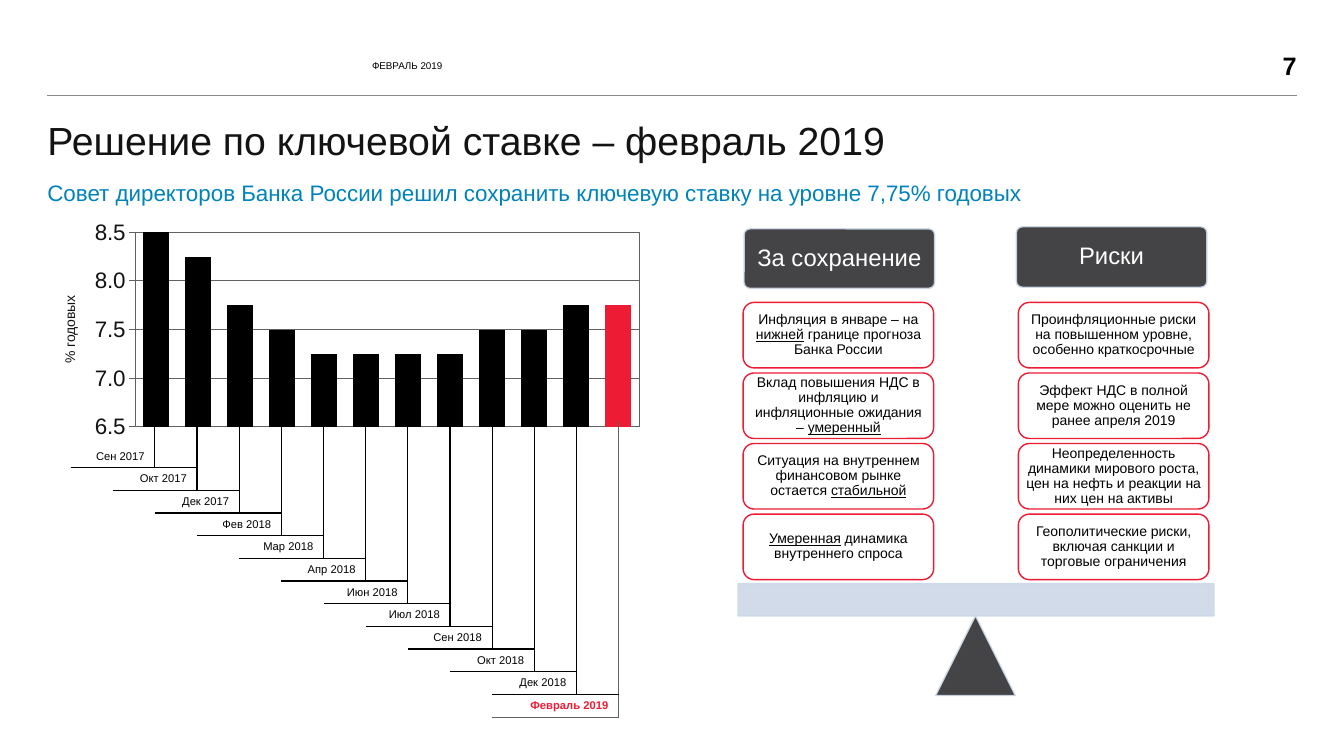
import lxml.etree
import pptx
import pptx.chart.data
import pptx.dml.color
import pptx.enum.chart
import pptx.enum.shapes
import pptx.enum.text
import pptx.oxml
import pptx.oxml.ns
import pptx.util

Inches = pptx.util.Inches
Pt = pptx.util.Pt
Align = pptx.enum.text.PP_ALIGN
Anchor = pptx.enum.text.MSO_ANCHOR
Preset = pptx.enum.shapes.MSO_SHAPE
qn = pptx.oxml.ns.qn

COLORS = {"ink": "131314", "black": "000000", "white": "FFFFFF", "red": "ED1B34",
          "blue": "0082BB", "rule": "888A8D", "grid": "616164",
          "dark": "303032", "pale": "CCD8E7"}

TITLE = "Решение по ключевой ставке – февраль 2019"
SUBTITLE = "Совет директоров Банка России решил сохранить ключевую ставку на уровне 7,75% годовых"
DATE = "ФЕВРАЛЬ 2019"
PAGE = "7"
AXIS_TITLE = "% годовых"
RATES = [("Сен 2017", 8.5), ("Окт 2017", 8.25), ("Дек 2017", 7.75), ("Фев 2018", 7.5),
         ("Мар 2018", 7.25), ("Апр 2018", 7.25), ("Июн 2018", 7.25), ("Июл 2018", 7.25),
         ("Сен 2018", 7.5), ("Окт 2018", 7.5), ("Дек 2018", 7.75), ("Февраль 2019", 7.75)]
SCALES = [
    {"header": "За сохранение", "header_at": (7.38, 2.27, 1.89, 0.59), "left": 7.37, "reasons": [
        [("Инфляция в январе – на ", False), ("нижней", True),
         (" границе прогноза Банка России", False)],
        [("Вклад повышения НДС в инфляцию и инфляционные ожидания – ", False),
         ("умеренный", True)],
        [("Ситуация на внутреннем финансовом рынке остается ", False), ("стабильной", True)],
        [("Умеренная", True), (" динамика внутреннего спроса", False)]]},
    {"header": "Риски", "header_at": (10.08, 2.25, 1.89, 0.6), "left": 10.1, "reasons": [
        [("Проинфляционные риски на повышенном уровне, особенно краткосрочные", False)],
        [("Эффект НДС в полной мере можно оценить не ранее апреля 2019", False)],
        [("Неопределенность динамики мирового роста, цен на нефть и реакции на них цен на активы",
          False)],
        [("Геополитические риски, включая санкции и торговые ограничения", False)]]},
]
REASON_TOP, REASON_STEP = 3.0, 0.7
COLUMN_WIDTH, ROW_HEIGHT = 0.42, 0.225


def color(name):
    return pptx.dml.color.RGBColor.from_string(COLORS[name])


def apply(target, formats):
    for name, value in formats.items():
        setattr(target, name, value)


def set_line(line, name, width):
    line.color.rgb = color(name)
    line.width = Pt(width)


def set_font(font, size, name, **formats):
    apply(font, {"name": "Arial", "size": Pt(size), "bold": False, **formats})
    font.color.rgb = color(name)


def place(shape, at):
    apply(shape, dict(zip(("left", "top", "width", "height"), map(Inches, at))))


def write(frame, runs, size, name, align=Align.LEFT, anchor=Anchor.MIDDLE, inset=0,
          spacing=0.9, **formats):
    sides = ("margin_left", "margin_top", "margin_right", "margin_bottom")
    apply(frame, {"word_wrap": True, "auto_size": pptx.enum.text.MSO_AUTO_SIZE.NONE,
                  "vertical_anchor": anchor, **dict.fromkeys(sides, Inches(inset))})
    paragraph = frame.paragraphs[0]
    apply(paragraph, {"alignment": align, "line_spacing": spacing, "space_before": Pt(0)})
    for text, underline in runs:
        run = paragraph.add_run()
        run.text = text
        set_font(run.font, size, name, underline=underline, **formats)
    return paragraph


def add_shape(slide, preset, at, fill, line):
    shape = slide.shapes.add_shape(preset, *map(Inches, at))
    shape.shadow.inherit = False
    set_line(shape.line, line, 1)
    if fill:
        shape.fill.solid()
        shape.fill.fore_color.rgb = color(fill)
        for tone in shape._element.spPr.iter(qn("a:srgbClr")):
            lxml.etree.SubElement(tone, qn("a:alpha"), val="90000")
    else:
        shape.fill.background()
    return shape


def add_header(slide):
    rule = slide.shapes.add_connector(pptx.enum.shapes.MSO_CONNECTOR.STRAIGHT,
                                      *map(Inches, (0.47, 0.95, 12.86, 0.95)))
    set_line(rule.line, "rule", 0.5)
    lxml.etree.SubElement(rule._element.spPr, qn("a:effectLst"))
    title, date, subtitle = slide.placeholders
    place(title, (0.47, 1.21, 12.39, 0.66))
    write(title.text_frame, [(TITLE, False)], 28, "ink", anchor=Anchor.TOP)
    for body, at, text, size, name, indent in (
            (date, (3.69, 0.37, 3.9, 0.57), DATE, 7, "black", 0.1),
            (subtitle, (0.47, 1.66, 12.33, 0.53), SUBTITLE, 16, "blue", 0)):
        place(body, at)
        paragraph = write(body.text_frame, [(text, False)], size, name)
        properties = paragraph._p.get_or_add_pPr()
        properties.set("marL", str(Inches(indent)))
        properties.set("indent", str(-Inches(indent)))
        lxml.etree.SubElement(properties, qn("a:buNone"))
    page = slide.shapes.add_textbox(*map(Inches, (12.05, 0.47, 0.81, 0.35)))
    write(page.text_frame, [(PAGE, False)], 18, "black", align=Align.RIGHT, spacing=1, bold=True)


def add_rate_chart(slide):
    data = pptx.chart.data.CategoryChartData(number_format="0.00")
    data.categories = [str(number + 1) for number in range(len(RATES))]
    data.add_series("Series 1", [rate for label, rate in RATES])
    chart = slide.shapes.add_chart(pptx.enum.chart.XL_CHART_TYPE.COLUMN_CLUSTERED,
                                   *map(Inches, (0.41, 1.88, 6.14, 2.48)), data).chart
    apply(chart, {"has_legend": False, "has_title": False})
    set_font(chart.font, 18, "ink")
    plot = chart.plots[0]
    apply(plot, {"gap_width": 60, "vary_by_categories": False})
    bars = plot.series[0]
    last_bar = bars.points[len(RATES) - 1]
    for target, name in ((bars, "black"), (last_bar, "red")):
        target.format.fill.solid()
        target.format.fill.fore_color.rgb = color(name)
    chart.category_axis.visible = False
    axis = chart.value_axis
    apply(axis, {"minimum_scale": 6.5, "maximum_scale": 8.5, "major_unit": 0.5,
                 "has_major_gridlines": True, "has_title": True,
                 "major_tick_mark": pptx.enum.chart.XL_TICK_MARK.OUTSIDE})
    apply(axis.tick_labels, {"number_format": "#,##0.0", "number_format_is_linked": False})
    set_font(axis.tick_labels.font, 16, "ink")
    set_line(axis.format.line, "grid", 0.75)
    set_line(axis.major_gridlines.format.line, "grid", 0.75)
    caption = axis.axis_title.text_frame.paragraphs[0].add_run()
    caption.text = AXIS_TITLE
    set_font(caption.font, 10, "ink")
    area = chart._chartSpace.chart.plotArea
    for layout in area.findall(qn("c:layout")):
        area.remove(layout)
    area.insert(0, pptx.oxml.parse_xml(
        f'<c:layout {pptx.oxml.ns.nsdecls("c")}><c:manualLayout><c:layoutTarget val="inner"/>'
        '<c:xMode val="edge"/><c:yMode val="edge"/><c:x val="0.152"/><c:y val="0.171"/>'
        '<c:w val="0.814"/><c:h val="0.779"/></c:manualLayout></c:layout>'))
    area.append(pptx.oxml.parse_xml(
        f'<c:spPr {pptx.oxml.ns.nsdecls("c", "a")}><a:noFill/><a:ln w="9525"><a:solidFill>'
        f'<a:srgbClr val="{COLORS["grid"]}"/></a:solidFill></a:ln></c:spPr>'))


def add_border(cell, side, name, width):
    line = lxml.etree.SubElement(cell._tc.get_or_add_tcPr(), qn(f"a:ln{side}"), w=str(Pt(width)))
    fill = lxml.etree.SubElement(line, qn("a:solidFill"))
    lxml.etree.SubElement(fill, qn("a:srgbClr"), val=COLORS[name])


def add_label_stairs(slide):
    size = len(RATES) + 1
    table = slide.shapes.add_table(size, size, Inches(0.7), Inches(4.19), Inches(5.44),
                                   Inches(ROW_HEIGHT * size)).table
    apply(table, {"first_row": False, "horz_banding": False})
    style = table._tbl.tblPr.find(qn("a:tableStyleId"))
    style.text = "{2D5ABB26-0587-4C30-8999-92F81FD0307C}"
    for row in table.rows:
        row.height = Inches(ROW_HEIGHT)
    for column in table.columns:
        column.width = Inches(5.44 / size)
    last = len(RATES) - 1
    for row in range(size):
        step = row - 1
        first = min(step, last - 1)
        end = step + 1
        for column in range(size):
            cell = table.cell(row, column)
            in_label = row > 0 and first <= column <= end
            pen = ("grid", 0.5) if column == last + 1 or step == last else ("black", 1)
            if column >= max(end, 1) and (not in_label or column == end) or in_label and column == first:
                add_border(cell, "R", *pen)
            if in_label:
                add_border(cell, "B", *pen)
            cell.fill.background()
            apply(cell, {"margin_top": 0, "margin_bottom": 0})
            if not (in_label and column == first):
                ending = cell.text_frame.paragraphs[0]._p
                lxml.etree.SubElement(ending, qn("a:endParaRPr"), sz="800")
        if row > 0:
            label = table.cell(row, first)
            label.merge(table.cell(row, end))
            apply(label, {"vertical_anchor": Anchor.BOTTOM, "margin_bottom": Inches(0.05)})
            paragraph = label.text_frame.paragraphs[0]
            paragraph.alignment = Align.RIGHT
            run = paragraph.add_run()
            run.text = RATES[step][0]
            set_font(run.font, 8, "red" if step == last else "black", bold=step == last)


def add_scales(slide):
    add_shape(slide, Preset.ISOSCELES_TRIANGLE, (9.28, 6.11, 0.79, 0.79), "dark", "pale")
    add_shape(slide, Preset.RECTANGLE, (7.32, 5.79, 4.72, 0.32), "pale", "pale")
    for scale in SCALES:
        header = add_shape(slide, Preset.ROUNDED_RECTANGLE, scale["header_at"], "dark", "pale")
        header.adjustments[0] = 0.1
        write(header.text_frame, [(scale["header"], False)], 17, "white", Align.CENTER, inset=0.07)
        for index, runs in enumerate(scale["reasons"]):
            at = (scale["left"], REASON_TOP + index * REASON_STEP, 1.89, 0.65)
            reason = add_shape(slide, Preset.ROUNDED_RECTANGLE, at, None, "red")
            write(reason.text_frame, runs, 10, "black", Align.CENTER, inset=0.04)


def main():
    presentation = pptx.Presentation()
    apply(presentation, {"slide_width": Inches(13.33), "slide_height": Inches(7.5)})
    slide = presentation.slides.add_slide(presentation.slide_layouts[3])
    add_header(slide)
    add_rate_chart(slide)
    add_label_stairs(slide)
    add_scales(slide)
    presentation.save("out.pptx")


if __name__ == "__main__":
    main()
